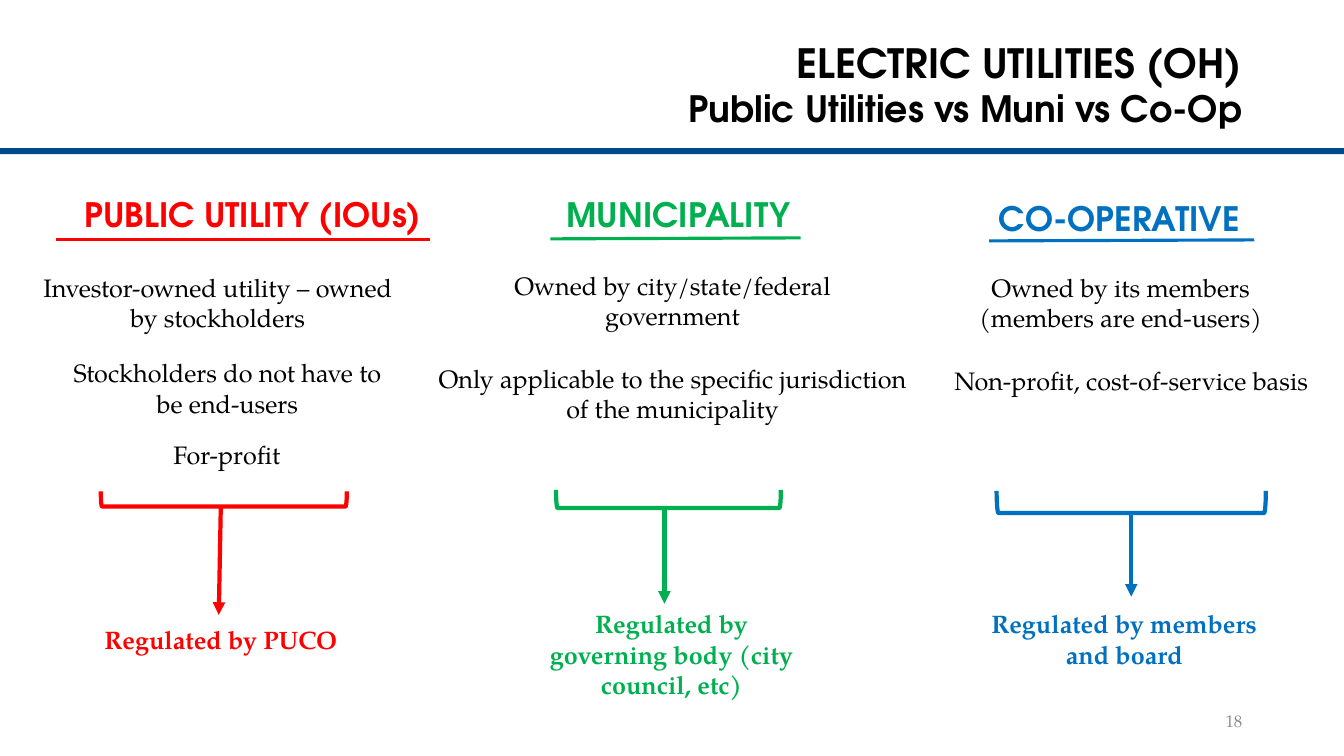
from dataclasses import dataclass

from lxml import etree
from pptx import Presentation
from pptx.dml.color import RGBColor
from pptx.enum.shapes import MSO_CONNECTOR, MSO_SHAPE
from pptx.enum.text import MSO_ANCHOR, MSO_AUTO_SIZE, PP_ALIGN
from pptx.oxml.ns import qn
from pptx.util import Inches, Pt

STRAIGHT = MSO_CONNECTOR.STRAIGHT
RECTANGLE, BRACKET = MSO_SHAPE.RECTANGLE, MSO_SHAPE.LEFT_BRACKET
LEFT, CENTER, RIGHT = PP_ALIGN.LEFT, PP_ALIGN.CENTER, PP_ALIGN.RIGHT
TOP, MIDDLE = MSO_ANCHOR.TOP, MSO_ANCHOR.MIDDLE
FIXED, GROW = MSO_AUTO_SIZE.NONE, MSO_AUTO_SIZE.SHAPE_TO_FIT_TEXT


@dataclass(frozen=True)
class Theme:
    display: str = "TeX Gyre Adventor"
    serif: str = "TeX Gyre Pagella"
    black: str = "000000"
    gray: str = "8C8C8C"
    navy: str = "004A8B"
    red: str = "FF0000"
    green: str = "00B050"
    blue: str = "0070C0"
    title: float = 28.8
    subtitle: float = 25.9
    heading: float = 24
    body: float = 18
    number: float = 12
    underline: float = 2.25
    stroke: float = 3


THEME = Theme()

# Each column: heading, underline ends, statements, bracket (centre x, centre y,
# span, depth), arrow ends, regulator. Boxes are left, top, width, height.
COLUMNS = [
    dict(color=THEME.red,
         heading=("PUBLIC UTILITY (IOUs)", (0.74, 1.87, 3.57, 0.5)),
         underline=(0.56, 2.38, 4.26, 2.38),
         statements=[
             ("Investor-owned utility – owned by stockholders", (0.24, 2.65, 3.84, 0.71)),
             ("Stockholders do not have to be end-users", (0.58, 3.5, 3.35, 0.71)),
             ("For-profit", (-0.53, 4.31, 5.56, 0.4))],
         bracket=(2.22, 4.95, 2.44, 0.15),
         arrow=(2.19, 5.03, 2.17, 6.1),
         regulator=("Regulated by PUCO", (0.58, 6.14, 3.22, 0.4))),
    dict(color=THEME.green,
         heading=("MUNICIPALITY", (5.52, 1.87, 2.62, 0.5)),
         underline=(5.46, 2.37, 7.94, 2.36),
         statements=[
             ("Owned by city/state/federal government", (4.33, 2.63, 4.68, 0.71)),
             ("Only applicable to the specific jurisdiction of the municipality",
              (4.24, 3.55, 4.86, 0.71))],
         bracket=(6.63, 4.95, 2.23, 0.18),
         arrow=(6.59, 5.02, 6.59, 5.99),
         regulator=("Regulated by governing body (city council, etc)",
                    (5.29, 5.99, 2.74, 1.01))),
    dict(color=THEME.blue,
         heading=("CO-OPERATIVE", (9.81, 1.91, 2.77, 0.5)),
         underline=(9.81, 2.39, 12.44, 2.38),
         statements=[
             ("Owned by its members (members are end-users)", (9.16, 2.65, 3.91, 0.71)),
             ("Non-profit, cost-of-service basis", (9.31, 3.58, 3.82, 0.4))],
         bracket=(11.22, 4.98, 2.67, 0.22),
         arrow=(11.22, 5.09, 11.22, 5.92),
         regulator=("Regulated by members and board", (9.54, 5.99, 3.22, 0.71))),
]


def write(box, text, font, size, color, bold=False, align=CENTER,
          anchor=TOP, fit=GROW, spacing=1.0):
    frame = box.text_frame
    frame.word_wrap = True
    frame.auto_size = fit
    frame.vertical_anchor = anchor
    para = frame.paragraphs[0]
    para.alignment = align
    para.line_spacing = spacing
    para.space_before = Pt(0)
    span = para.add_run()
    span.text = text
    span.font.name = font
    span.font.size = Pt(size)
    span.font.bold = bold
    span.font.color.rgb = RGBColor.from_string(color)


def add_text(page, text, place, font, size, color, **style):
    box = page.shapes.add_textbox(*map(Inches, place))
    write(box, text, font, size, color, **style)


def fill_placeholder(box, text, place, size, **style):
    box.left, box.top, box.width, box.height = map(Inches, place)
    write(box, text, THEME.display, size, THEME.black, bold=True,
          align=RIGHT, fit=FIXED, **style)


def add_line(page, ends, color, width, arrow=False):
    line = page.shapes.add_connector(STRAIGHT, *map(Inches, ends))
    line.line.color.rgb = RGBColor.from_string(color)
    line.line.width = Pt(width)
    if arrow:
        etree.SubElement(line.line._get_or_add_ln(), qn("a:tailEnd"), type="triangle")
    etree.SubElement(line._element.spPr, qn("a:effectLst"))


def add_bracket(page, center_x, center_y, span, depth, color):
    # A left bracket turned a quarter, so that it opens upward
    bracket = page.shapes.add_shape(
        BRACKET, Inches(center_x - depth / 2), Inches(center_y - span / 2),
        Inches(depth), Inches(span))
    bracket.rotation = 270
    bracket.shadow.inherit = False
    bracket.fill.background()
    bracket.line.color.rgb = RGBColor.from_string(color)
    bracket.line.width = Pt(THEME.stroke)


def add_header(page):
    rule = page.shapes.add_shape(
        RECTANGLE, Inches(0), Inches(1.47), Inches(13.33), Inches(0.06))
    rule.shadow.inherit = False
    rule.fill.solid()
    rule.fill.fore_color.rgb = RGBColor.from_string(THEME.navy)
    rule.line.fill.background()
    fill_placeholder(page.shapes.title, "ELECTRIC UTILITIES (OH)",
                     (1.89, 0.4, 10.53, 0.49), THEME.title, anchor=MIDDLE, spacing=0.9)
    fill_placeholder(page.placeholders[1], "Public Utilities vs Muni vs Co-Op",
                     (1.89, 0.89, 10.53, 0.46), THEME.subtitle, spacing=0.8)


def add_column(page, column):
    color = column["color"]
    add_text(page, *column["heading"], THEME.display, THEME.heading, color,
             bold=True, align=LEFT)
    add_line(page, column["underline"], color, THEME.underline)
    for text, place in column["statements"]:
        add_text(page, text, place, THEME.serif, THEME.body, THEME.black)
    add_bracket(page, *column["bracket"], color)
    add_line(page, column["arrow"], color, THEME.stroke, arrow=True)
    add_text(page, *column["regulator"], THEME.serif, THEME.body, color, bold=True)


def main():
    deck = Presentation()
    deck.slide_width, deck.slide_height = Inches(13.33), Inches(7.5)
    # The section layout has a title and an unbulleted body
    page = deck.slides.add_slide(deck.slide_layouts[2])
    add_header(page)
    for column in COLUMNS:
        add_column(page, column)
    # Slide number
    add_text(page, "18", (9.42, 6.95, 3, 0.4), THEME.serif, THEME.number,
             THEME.gray, align=RIGHT, anchor=MIDDLE, fit=FIXED)
    deck.save("out.pptx")


if __name__ == "__main__":
    main()
